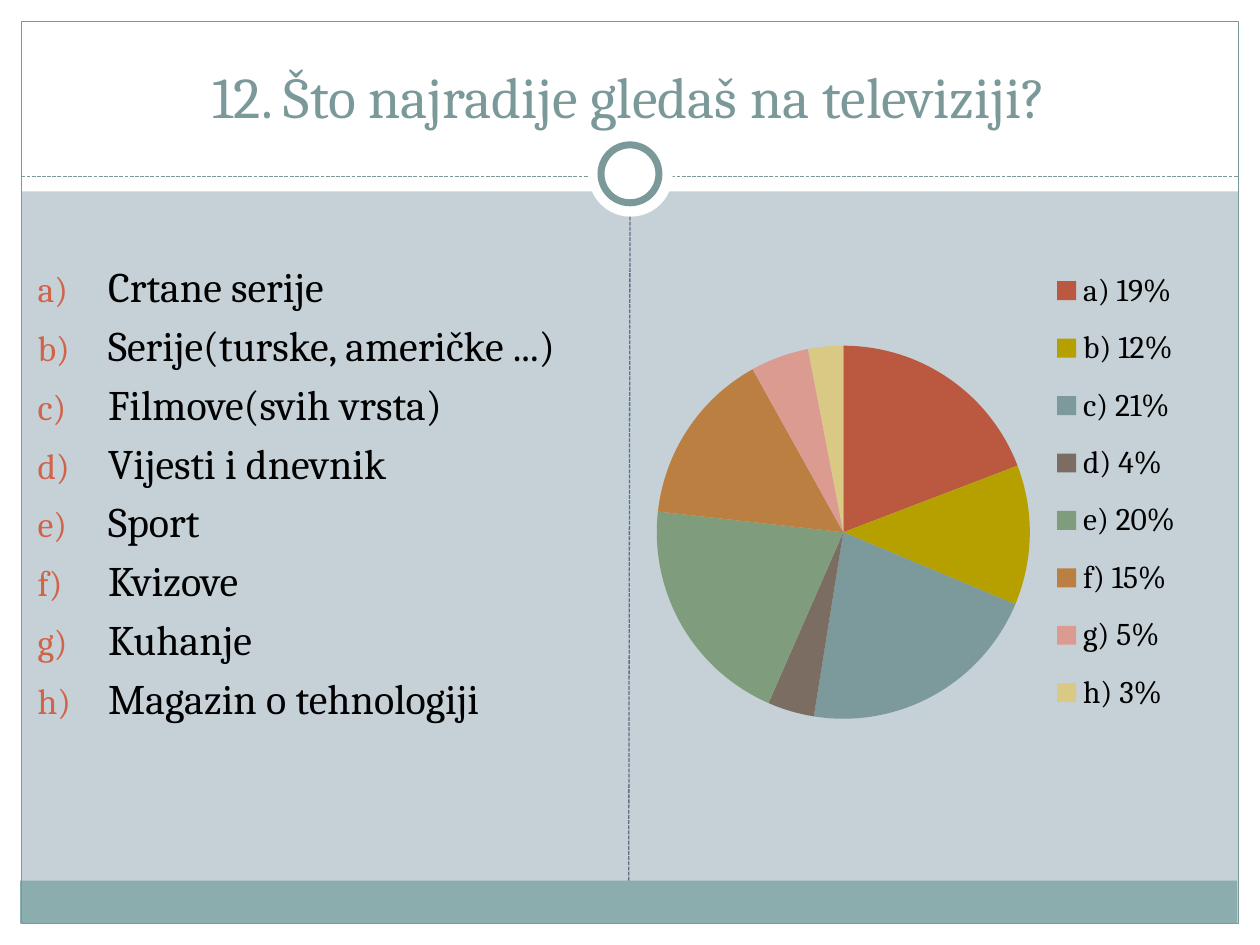
from lxml import etree
from pptx import Presentation
from pptx.chart.data import CategoryChartData
from pptx.dml.color import RGBColor
from pptx.enum.chart import XL_CHART_TYPE as ChartType, XL_LEGEND_POSITION as LegendPosition
from pptx.enum.dml import MSO_LINE_DASH_STYLE as Dash
from pptx.enum.shapes import MSO_CONNECTOR as Connector, MSO_SHAPE as Shape
from pptx.enum.text import MSO_ANCHOR as Anchor, PP_ALIGN as Align
from pptx.oxml import parse_xml
from pptx.oxml.ns import nsdecls, qn
from pptx.util import Inches, Pt

FONT = "Cambria"
COLORS = {
    "background": "C5D1D7", "white": "FFFFFF", "black": "000000",
    "footer": "8CADAE", "frame": "7C999A", "divider": "646B86", "letter": "D16349",
}
SLICE_COLORS = ["BB5940", "B5A000", "7C999B", "7C6D63",
                "7F9C7D", "BB8041", "DC9B90", "DAC985"]
PROGRAMMES = ["Crtane serije", "Serije(turske, američke ...)", "Filmove(svih vrsta)",
              "Vijesti i dnevnik", "Sport", "Kvizove", "Kuhanje", "Magazin o tehnologiji"]
SHARES = [19, 12, 21, 4, 20, 15, 5, 3]


def rgb(name):
    return RGBColor.from_string(COLORS[name])


def write_text(paragraph, text, size=24, color="black", align=None, before=0):
    paragraph.alignment = align
    paragraph.space_before = Pt(before)
    run = paragraph.add_run()
    run.text = text
    run.font.name, run.font.size = FONT, Pt(size)
    run.font.color.rgb = rgb(color)


def letter_bullet(paragraph, indent=0.56):
    properties = paragraph._p.get_or_add_pPr()
    properties.set("marL", str(Inches(indent)))
    properties.set("indent", str(Inches(-indent)))
    for bullet in (
        f'<a:buClr {nsdecls("a")}><a:srgbClr val="{COLORS["letter"]}"/></a:buClr>',
        f'<a:buSzPct {nsdecls("a")} val="85000"/>',
        f'<a:buFont {nsdecls("a")} typeface="{FONT}"/>',
        f'<a:buAutoNum {nsdecls("a")} type="alphaLcParenR"/>',
    ):
        properties.append(parse_xml(bullet))


def manual_layout(parent, before, x, y, w, h, inner=False):
    """Place a chart part by fractions of the chart, ahead of the child `before`."""
    for old in parent.findall(qn("c:layout")):
        parent.remove(old)
    target = '<c:layoutTarget val="inner"/>' if inner else ""
    layout = parse_xml(
        f'<c:layout {nsdecls("c")}><c:manualLayout>{target}'
        '<c:xMode val="edge"/><c:yMode val="edge"/>'
        f'<c:x val="{x}"/><c:y val="{y}"/><c:w val="{w}"/><c:h val="{h}"/>'
        '</c:manualLayout></c:layout>')
    parent.find(qn(before)).addprevious(layout)


class SlideBuilder:
    def __init__(self, slide):
        self.slide = slide
        self.shapes = slide.shapes
        slide.background.fill.solid()
        slide.background.fill.fore_color.rgb = rgb("background")

    def shape(self, kind, x, y, w, h, fill=None, line=None, width=0.75):
        shape = self.shapes.add_shape(kind, Inches(x), Inches(y), Inches(w), Inches(h))
        shape.shadow.inherit = False
        if fill:
            shape.fill.solid()
            shape.fill.fore_color.rgb = rgb(fill)
        else:
            shape.fill.background()
        if line:
            shape.line.color.rgb = rgb(line)
            shape.line.width = Pt(width)
        else:
            shape.line.fill.background()

    def dashed_line(self, x1, y1, x2, y2, color):
        connector = self.shapes.add_connector(
            Connector.STRAIGHT, Inches(x1), Inches(y1), Inches(x2), Inches(y2))
        connector.line.color.rgb = rgb(color)
        connector.line.width = Pt(0.75)
        connector.line.dash_style = Dash.SQUARE_DOT
        etree.SubElement(connector._element.spPr, qn("a:effectLst"))

    def title(self, text, x, y, w, h):
        title = self.shapes.title
        title.left, title.top, title.width, title.height = map(Inches, (x, y, w, h))
        title.text_frame.vertical_anchor = Anchor.BOTTOM
        write_text(title.text_frame.paragraphs[0], text, size=33, color="frame",
                   align=Align.CENTER)
        # Bring the title in front of the white bands
        self.shapes._spTree.append(title._element)

    def lettered_list(self, items, x, y, w, h):
        frame = self.shapes.add_textbox(Inches(x), Inches(y), Inches(w), Inches(h)).text_frame
        frame.word_wrap = True
        for index, item in enumerate(items):
            paragraph = frame.add_paragraph() if index else frame.paragraphs[0]
            write_text(paragraph, item, before=4.8)
            letter_bullet(paragraph)

    def pie(self, shares, x, y, w, h):
        data = CategoryChartData()
        data.categories = [f"{letter}) {share}%" for letter, share in zip("abcdefgh", shares)]
        data.add_series("Series 1", shares)
        chart = self.shapes.add_chart(
            ChartType.PIE, Inches(x), Inches(y), Inches(w), Inches(h), data).chart
        chart.has_title = False
        chart.font.name, chart.font.size = FONT, Pt(18)
        chart.font.color.rgb = rgb("black")
        chart.has_legend = True
        chart.legend.position = LegendPosition.RIGHT
        chart.legend.include_in_layout = False
        plot = chart.plots[0]
        plot.vary_by_categories = True
        for index, color in enumerate(SLICE_COLORS):
            fill = plot.series[0].points[index].format.fill
            fill.solid()
            fill.fore_color.rgb = RGBColor.from_string(color)
        plot_area = chart._chartSpace.chart.plotArea
        manual_layout(plot_area, "c:pieChart", 0.03, 0.2, 0.67, 0.6, inner=True)
        manual_layout(chart.legend._element, "c:overlay", 0.73, 0.05, 0.25, 0.77)


def main():
    presentation = Presentation()
    presentation.slide_width, presentation.slide_height = Inches(10), Inches(7.5)
    page = SlideBuilder(presentation.slides.add_slide(presentation.slide_layouts[5]))

    margins = [(0, 7.33, 10, 0.17), (0, 0, 10, 1.52), (0, 0, 0.17, 7.5), (9.83, 0, 0.17, 7.5)]
    for margin in margins:
        page.shape(Shape.RECTANGLE, *margin, fill="white")
    page.shape(Shape.RECTANGLE, 0.16, 6.99, 9.66, 0.34, fill="footer")
    page.shape(Shape.RECTANGLE, 0.17, 0.17, 9.66, 7.16, line="frame")
    page.dashed_line(0.17, 1.4, 9.83, 1.4, "frame")
    page.shape(Shape.OVAL, 4.67, 1.05, 0.67, 0.67, fill="white")
    page.shape(Shape.OVAL, 4.77, 1.15, 0.46, 0.46, fill="white", line="frame", width=4)
    page.dashed_line(4.99, 6.99, 5, 1.72, "divider")

    page.title("12. Što najradije gledaš na televiziji?", 0.33, 0.25, 9.33, 0.83)
    page.lettered_list(PROGRAMMES, 0.2, 2.02, 4.72, 4.6)
    page.pie(SHARES, 5.08, 1.75, 4.42, 4.95)
    presentation.save("out.pptx")


if __name__ == "__main__":
    main()
